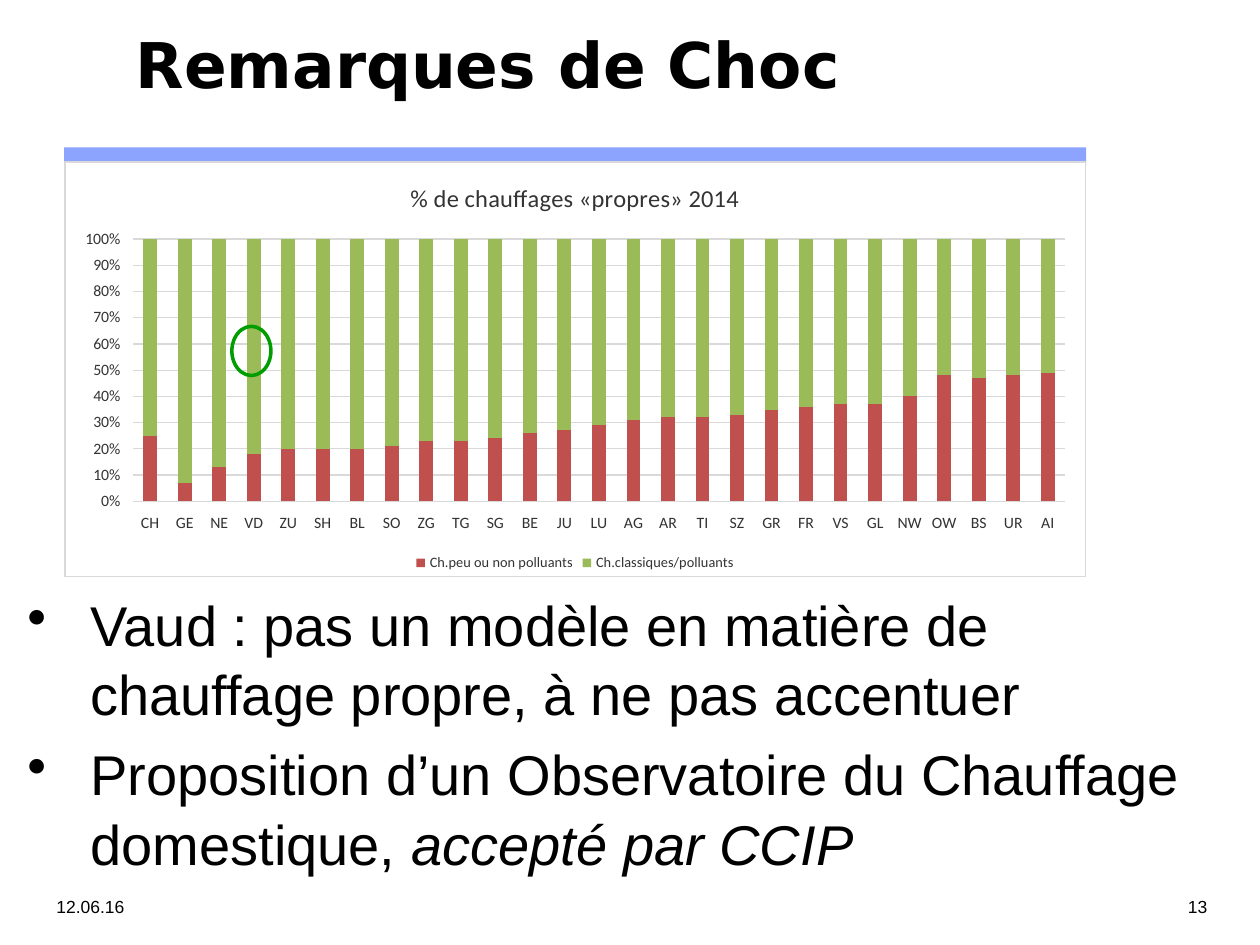
from lxml import etree
from pptx import Presentation
from pptx.chart.data import CategoryChartData
from pptx.dml.color import RGBColor
from pptx.enum import chart as charts, shapes, text
from pptx.oxml import parse_xml
from pptx.oxml.ns import nsdecls, qn
from pptx.util import Inches, Pt

COLORS = {"black": "000000", "gray": "333333", "grid": "D9D9D9", "white": "FFFFFF",
          "band": "8CA4FD", "red": "C0504D", "green": "9BBB59", "ring": "009D00"}


def rgb(name):
    return RGBColor.from_string(COLORS[name])


def set_font(font, name, size, color="black", bold=False):
    font.size, font.bold = Pt(size), bold
    font.color.rgb = rgb(color)
    font.name = name


deck = Presentation()
deck.slide_width, deck.slide_height = Inches(10), Inches(7.5)
page = deck.slides.add_slide(deck.slide_layouts[6])

# Blue band above the chart
band = page.shapes.add_shape(shapes.MSO_SHAPE.RECTANGLE, Inches(0.51), Inches(1.17),
                             Inches(8.11), Inches(0.14))
band.shadow.inherit = False
band.fill.solid()
band.fill.fore_color.rgb = rgb("band")
band.line.fill.background()

# Title, date and page number
labels = [
    ("Remarques de Choc", (0.98, 0.13, 6.93, 0.75), "DejaVu Sans", 36, False),
    ("12.06.16", (0.35, 7.06, 1.5, 0.27), "Arial", 10, True),
    ("13", (9.33, 7.06, 0.37, 0.26), "Arial", 10, False),
]
for words, place, font_name, size, wrap in labels:
    box = page.shapes.add_textbox(*map(Inches, place))
    box.text_frame.word_wrap = wrap
    para = box.text_frame.paragraphs[0]
    span = para.add_run()
    span.text = words
    is_title = size == 36
    if is_title:
        box.text_frame.vertical_anchor = text.MSO_ANCHOR.MIDDLE
        span.font.color.rgb = rgb("black")
        span.font.fill._xPr.append(parse_xml(
            f'<a:effectLst {nsdecls("a")}><a:outerShdw dist="35921" dir="2700000">'
            '<a:srgbClr val="C0C0C0"/></a:outerShdw></a:effectLst>'))
    set_font(span.font, font_name, size, bold=is_title)

# Bulleted remarks
remarks = [
    [("Vaud : pas un modèle en matière de chauffage propre, à ne pas accentuer", False)],
    [("Proposition d’un Observatoire du Chauffage domestique, ", False),
     ("accepté par CCIP", True)],
]
box = page.shapes.add_textbox(Inches(0.12), Inches(4.62), Inches(9.76), Inches(2.2))
frame = box.text_frame
frame.word_wrap = True
for index, remark in enumerate(remarks):
    para = frame.add_paragraph() if index else frame.paragraphs[0]
    props = para._p.get_or_add_pPr()
    props.set("marL", str(Inches(0.5)))
    props.set("indent", str(Inches(-0.5)))
    etree.SubElement(props, qn("a:buChar")).set("char", "•")
    para.line_spacing = 1.03
    if index:
        para.space_before = Pt(6.4)
    set_font(para.font, "Arial", 32)
    for words, italic in remark:
        span = para.add_run()
        span.text = words
        if italic:
            span.font.italic = True

# Chart of heating shares by canton
cantons = ("CH GE NE VD ZU SH BL SO ZG TG SG BE JU LU AG AR TI SZ GR FR VS GL NW OW "
           "BS UR AI").split()
low = [25, 7, 13, 18, 20, 20, 20, 21, 23, 23, 24, 26, 27, 29, 31, 32, 32, 33, 35, 36,
       37, 37, 40, 48, 47, 48, 49]
data = CategoryChartData()
data.categories = cantons
data.add_series("Ch.peu ou non polluants", low)
data.add_series("Ch.classiques/polluants", [share - 100 for share in low])
chart = page.shapes.add_chart(charts.XL_CHART_TYPE.COLUMN_STACKED_100, Inches(0.51),
                              Inches(1.28), Inches(8.11), Inches(3.3), data).chart
set_font(chart.font, "Calibri", 10)
chart.has_title = True
title = chart.chart_title.text_frame
title.text = "% de chauffages «propres» 2014"
set_font(title.paragraphs[0].font, "Calibri", 14, "gray")

plot = chart.plots[0]
plot.gap_width, plot.overlap, plot.vary_by_categories = 150, 100, False
for series, color in zip(plot.series, ("red", "green")):
    series.invert_if_negative = False
    series.format.fill.solid()
    series.format.fill.fore_color.rgb = rgb(color)

for axis in (chart.category_axis, chart.value_axis):
    axis.major_tick_mark = axis.minor_tick_mark = charts.XL_TICK_MARK.NONE
    axis.tick_label_position = charts.XL_TICK_LABEL_POSITION.LOW
    set_font(axis.tick_labels.font, "Calibri", 9, "gray")
shares = chart.value_axis
shares.minimum_scale, shares.maximum_scale, shares.major_unit = 0, 1, 0.1
shares.tick_labels.number_format = "0%"
shares.tick_labels.number_format_is_linked = False
shares.format.line.fill.background()
shares.has_major_gridlines = True
for line in (chart.category_axis.format.line, shares.major_gridlines.format.line):
    line.color.rgb = rgb("grid")
    line.width = Pt(0.75)

chart.has_legend = True
chart.legend.position = charts.XL_LEGEND_POSITION.BOTTOM
chart.legend.include_in_layout = False
set_font(chart.legend.font, "Calibri", 8.2, "gray")

# White chart area with a thin border
area = parse_xml(
    f'<c:spPr {nsdecls("c", "a")}><a:solidFill><a:srgbClr val="{COLORS["white"]}"/></a:solidFill>'
    f'<a:ln w="{Pt(0.75)}"><a:solidFill><a:srgbClr val="{COLORS["grid"]}"/></a:solidFill></a:ln>'
    '</c:spPr>')
chart._chartSpace.find(qn("c:chart")).addnext(area)

# Ring around the VD column
ring = page.shapes.add_shape(shapes.MSO_SHAPE.OVAL, Inches(1.84), Inches(2.59),
                             Inches(0.31), Inches(0.39))
ring.shadow.inherit = False
ring.fill.background()
ring.line.color.rgb = rgb("ring")
ring.line.width = Pt(2)

deck.save("out.pptx")
